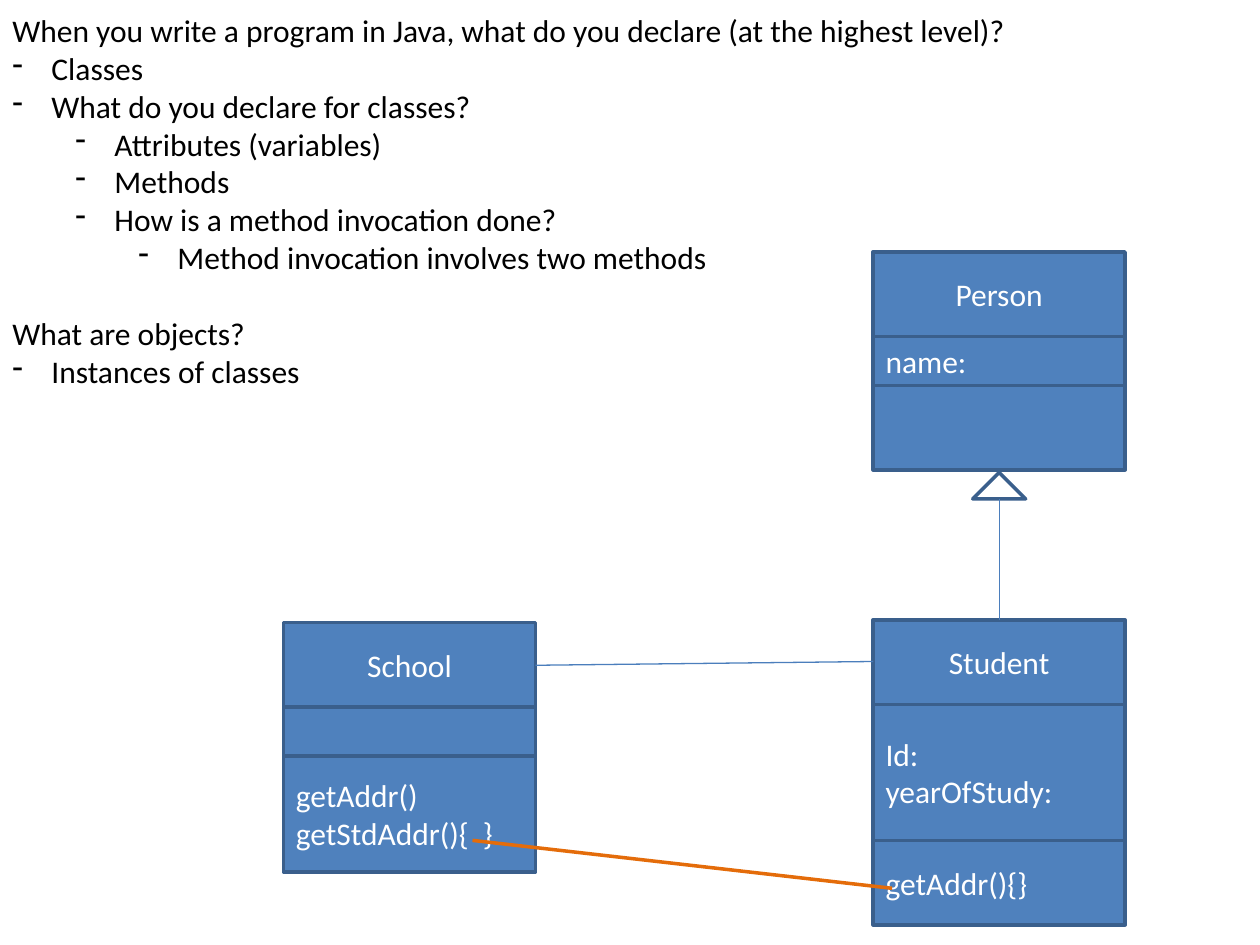
"""Build a slide on Java classes with a small UML class diagram."""
from dataclasses import dataclass

from lxml.etree import SubElement
from pptx import Presentation
from pptx.dml.color import RGBColor
from pptx.enum.shapes import MSO_CONNECTOR as Connector, MSO_SHAPE as Preset
from pptx.enum.text import MSO_ANCHOR as Anchor, MSO_AUTO_SIZE as AutoSize, PP_ALIGN as Align
from pptx.oxml.ns import qn
from pptx.util import Inches, Pt


@dataclass(frozen=True)
class Theme:
    """Colours, type and line widths of the slide."""
    font: str = "Calibri"
    size: int = 18
    ink: str = "000000"
    box_text: str = "FFFFFF"
    box_fill: str = "4F81BD"
    box_line: str = "3A5F8C"
    link: str = "4B7EBC"
    call: str = "E46C0A"
    thick: float = 2
    thin: float = 0.75


@dataclass(frozen=True)
class Note:
    """A line of the outline; level None means no dash."""
    text: str
    level: int | None = None
    gap: float = 0


@dataclass(frozen=True)
class Section:
    """A compartment of a class box."""
    height: float
    lines: tuple[str, ...] = ()
    align: Align = Align.LEFT


@dataclass(frozen=True)
class ClassBox:
    """A class with its compartments from top to bottom."""
    left: float
    top: float
    sections: tuple[Section, ...]


@dataclass(frozen=True)
class Link:
    """A straight line between two points."""
    start: tuple[float, float]
    end: tuple[float, float]
    color: str
    width: float


THEME = Theme()
BOX_WIDTH = 2
TITLE_HEIGHT = 0.67
HANG = 0.31
LEVEL_STEP = 0.5

NOTES = (
    Note("When you write a program in Java, what do you declare (at the highest level)?"),
    Note("Classes", 0),
    Note("What do you declare for classes?", 0),
    Note("Attributes (variables)", 1),
    Note("Methods", 1),
    Note("How is a method invocation done?", 1),
    Note("Method invocation involves two methods", 2),
    Note("What are objects?", gap=22),
    Note("Instances of classes", 0),
)


def title(name: str) -> Section:
    """Return the compartment that names a class."""
    return Section(TITLE_HEIGHT, (name,), Align.CENTER)


CLASSES = (
    ClassBox(6.93, 2, (title("Person"), Section(0.39, ("name:",)), Section(0.67))),
    ClassBox(6.93, 4.92, (title("Student"), Section(1.08, ("Id:", "yearOfStudy:")),
                          Section(0.67, ("getAddr(){}",)))),
    ClassBox(2.25, 4.94, (title("School"), Section(0.39),
                          Section(0.92, ("getAddr()", "getStdAddr(){  }")))),
)

LINKS = (
    Link((7.93, 3.96), (7.93, 4.92), THEME.link, THEME.thin),
    Link((6.93, 5.25), (4.25, 5.28), THEME.link, THEME.thin),
    Link((7.08, 7.05), (3.75, 6.67), THEME.call, THEME.thick),
)


def rgb(value: str) -> RGBColor:
    """Return the colour for a hex value."""
    return RGBColor.from_string(value)


def paragraph_at(frame, index: int):
    """Return the first paragraph, or append a further one."""
    return frame.add_paragraph() if index else frame.paragraphs[0]


def add_run(paragraph, text: str, color: str) -> None:
    """Append one styled run."""
    run = paragraph.add_run()
    run.text = text
    run.font.name = THEME.font
    run.font.size = Pt(THEME.size)
    run.font.color.rgb = rgb(color)


def add_dash(paragraph, level: int) -> None:
    """Give a paragraph a hanging dash at its level."""
    paragraph.level = level
    props = paragraph._p.get_or_add_pPr()
    props.set("marL", str(Inches(HANG + level * LEVEL_STEP)))
    props.set("indent", str(Inches(-HANG)))
    SubElement(props, qn("a:buFontTx"))
    SubElement(props, qn("a:buChar")).set("char", "-")


def draw_notes(slide, notes: tuple[Note, ...]) -> None:
    """Draw the outline."""
    box = slide.shapes.add_textbox(Inches(0), Inches(0.04), Inches(8.18), Inches(3.43))
    frame = box.text_frame
    frame.word_wrap = False
    frame.auto_size = AutoSize.SHAPE_TO_FIT_TEXT
    for index, note in enumerate(notes):
        paragraph = paragraph_at(frame, index)
        if note.level is not None:
            add_dash(paragraph, note.level)
        if note.gap:
            paragraph.space_before = Pt(note.gap)
        add_run(paragraph, note.text, THEME.ink)


def draw_outline(slide, preset: Preset, left: float, top: float, width: float, height: float):
    """Draw a preset shape with the diagram's border."""
    shape = slide.shapes.add_shape(preset, Inches(left), Inches(top), Inches(width), Inches(height))
    shape.shadow.inherit = False
    shape.line.color.rgb = rgb(THEME.box_line)
    shape.line.width = Pt(THEME.thick)
    return shape


def draw_class(slide, box: ClassBox) -> None:
    """Stack the compartments of one class."""
    top = box.top
    for section in box.sections:
        shape = draw_outline(slide, Preset.RECTANGLE, box.left, top, BOX_WIDTH, section.height)
        shape.fill.solid()
        shape.fill.fore_color.rgb = rgb(THEME.box_fill)
        frame = shape.text_frame
        frame.word_wrap = True
        frame.vertical_anchor = Anchor.MIDDLE
        for index, line in enumerate(section.lines):
            paragraph = paragraph_at(frame, index)
            paragraph.alignment = section.align
            add_run(paragraph, line, THEME.box_text)
        top += section.height


def draw_link(slide, link: Link) -> None:
    """Draw one line of the diagram."""
    points = (Inches(value) for value in link.start + link.end)
    line = slide.shapes.add_connector(Connector.STRAIGHT, *points)
    line.line.color.rgb = rgb(link.color)
    line.line.width = Pt(link.width)
    SubElement(line._element.spPr, qn("a:effectLst"))


def main() -> None:
    """Build and save the slide."""
    deck = Presentation()
    deck.slide_width, deck.slide_height = Inches(10), Inches(7.5)
    slide = deck.slides.add_slide(deck.slide_layouts[6])
    draw_notes(slide, NOTES)
    for box in CLASSES:
        draw_class(slide, box)
    inheritance = draw_outline(slide, Preset.ISOSCELES_TRIANGLE, 7.72, 3.75, 0.42, 0.21)
    inheritance.fill.background()
    for link in LINKS:
        draw_link(slide, link)
    deck.save("out.pptx")


if __name__ == "__main__":
    main()
